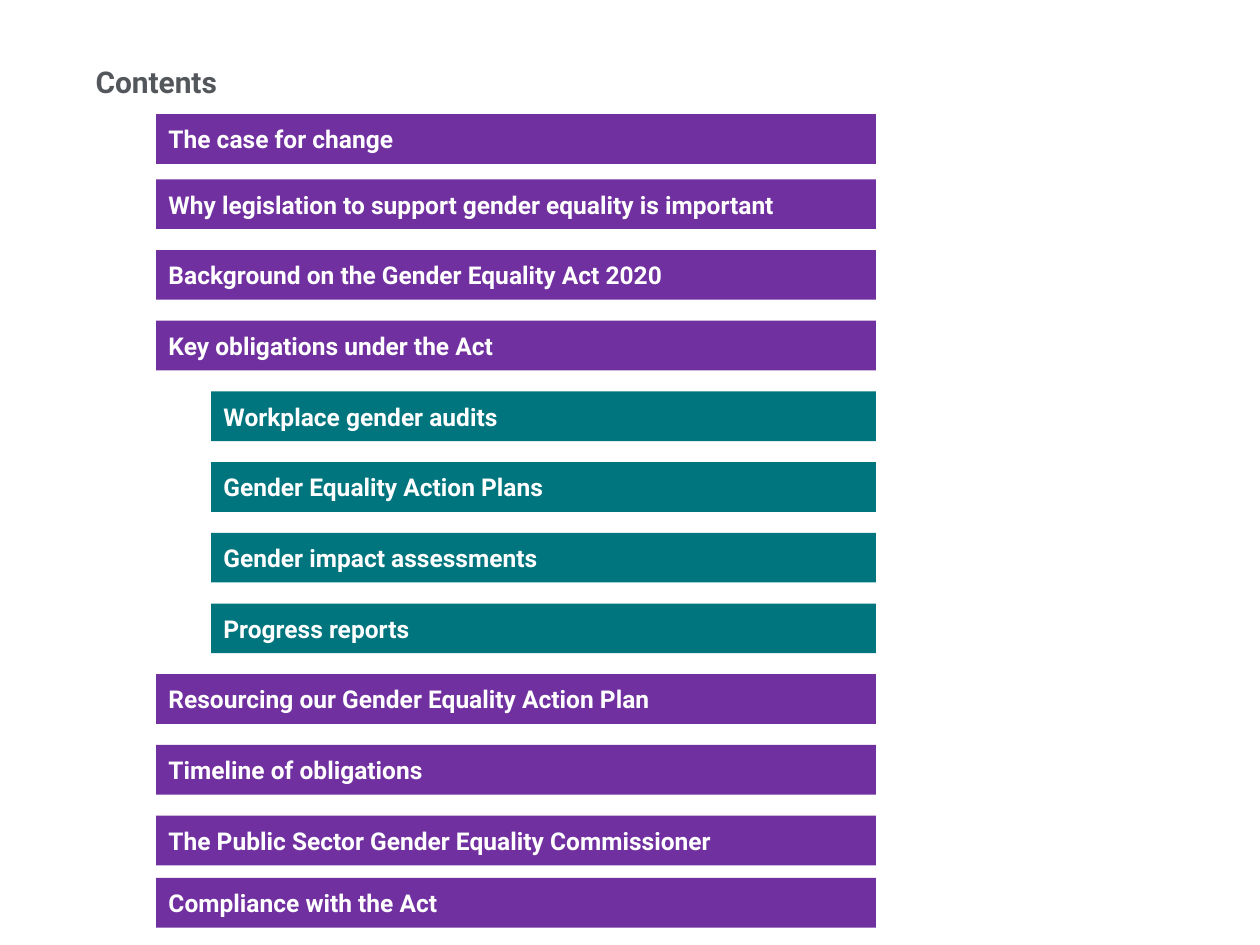
from dataclasses import dataclass

from pptx import Presentation
from pptx.dml.color import RGBColor
from pptx.enum.shapes import MSO_SHAPE
from pptx.enum.text import MSO_ANCHOR, MSO_AUTO_SIZE, PP_ALIGN
from pptx.util import Pt


@dataclass(frozen=True)
class Theme:
    font: str = "Roboto"
    title_size: float = 17.1
    bar_size: float = 14
    title: RGBColor = RGBColor(0x53, 0x56, 0x5A)
    bar_text: RGBColor = RGBColor(0xFF, 0xFF, 0xFF)
    # Bar fill by contents level
    levels: tuple = (RGBColor(0x70, 0x30, 0xA0), RGBColor(0x00, 0x75, 0x7D))


THEME = Theme()
TITLE_BOX = (54.6, 0, 484.6, 56.9)
CONTENTS_BOX = (89.2, 65.3, 411.3, 464.8)
BAR_HEIGHT = 28.4
BAR_PITCH = 40.4
FIRST_GAP = 8.8
LEVEL_INDENT = 31.4

# Each entry is its text and its level
CONTENTS = [
    ("The case for change", 0),
    ("Why legislation to support gender equality is important", 0),
    ("Background on the Gender Equality Act 2020", 0),
    ("Key obligations under the Act", 0),
    ("Workplace gender audits", 1),
    ("Gender Equality Action Plans", 1),
    ("Gender impact assessments", 1),
    ("Progress reports", 1),
    ("Resourcing our Gender Equality Action Plan", 0),
    ("Timeline of obligations", 0),
    ("The Public Sector Gender Equality Commissioner", 0),
    ("Compliance with the Act", 0),
]


def set_attributes(target, values):
    for name, value in values.items():
        setattr(target, name, value)


def write_text(shape, text, size, color, anchor, space_after=0):
    frame = shape.text_frame
    frame.text = text
    set_attributes(frame, {
        "word_wrap": True,
        "auto_size": MSO_AUTO_SIZE.NONE,
        "vertical_anchor": anchor,
    })
    paragraph = frame.paragraphs[0]
    set_attributes(paragraph, {
        "alignment": PP_ALIGN.LEFT,
        "space_after": Pt(space_after),
    })
    set_attributes(paragraph.font, {"name": THEME.font, "size": Pt(size), "bold": True})
    paragraph.font.color.rgb = color


def place_title(slide, box, text):
    title = slide.shapes.title
    sides = ("left", "top", "width", "height")
    set_attributes(title, {side: Pt(length) for side, length in zip(sides, box)})
    write_text(title, text, THEME.title_size, THEME.title, MSO_ANCHOR.BOTTOM)
    margins = ("margin_left", "margin_top", "margin_right", "margin_bottom")
    set_attributes(title.text_frame, dict.fromkeys(margins, 0))


def add_bar(slide, box, text, level):
    bar = slide.shapes.add_shape(MSO_SHAPE.RECTANGLE, *map(Pt, box))
    bar.shadow.inherit = False
    bar.fill.solid()
    bar.fill.fore_color.rgb = THEME.levels[level]
    bar.line.fill.background()
    write_text(bar, text, THEME.bar_size, THEME.bar_text, MSO_ANCHOR.MIDDLE, space_after=6)


def add_contents(slide, box, entries):
    """Stack the bars at an even pitch; the outer two sit on the box edges."""
    left, top, width, height = box
    tops = [top + BAR_HEIGHT + FIRST_GAP + BAR_PITCH * row for row in range(len(entries) - 2)]
    tops = [top, *tops, top + height - BAR_HEIGHT]
    for bar_top, (text, level) in zip(tops, entries):
        indent = LEVEL_INDENT * level
        add_bar(slide, (left + indent, bar_top, width - indent, BAR_HEIGHT), text, level)


def main():
    presentation = Presentation()
    set_attributes(presentation, {"slide_width": Pt(720), "slide_height": Pt(540)})
    title_only = presentation.slide_layouts.get_by_name("Title Only")
    slide = presentation.slides.add_slide(title_only)
    place_title(slide, TITLE_BOX, "Contents")
    add_contents(slide, CONTENTS_BOX, CONTENTS)
    presentation.save("out.pptx")


if __name__ == "__main__":
    main()
